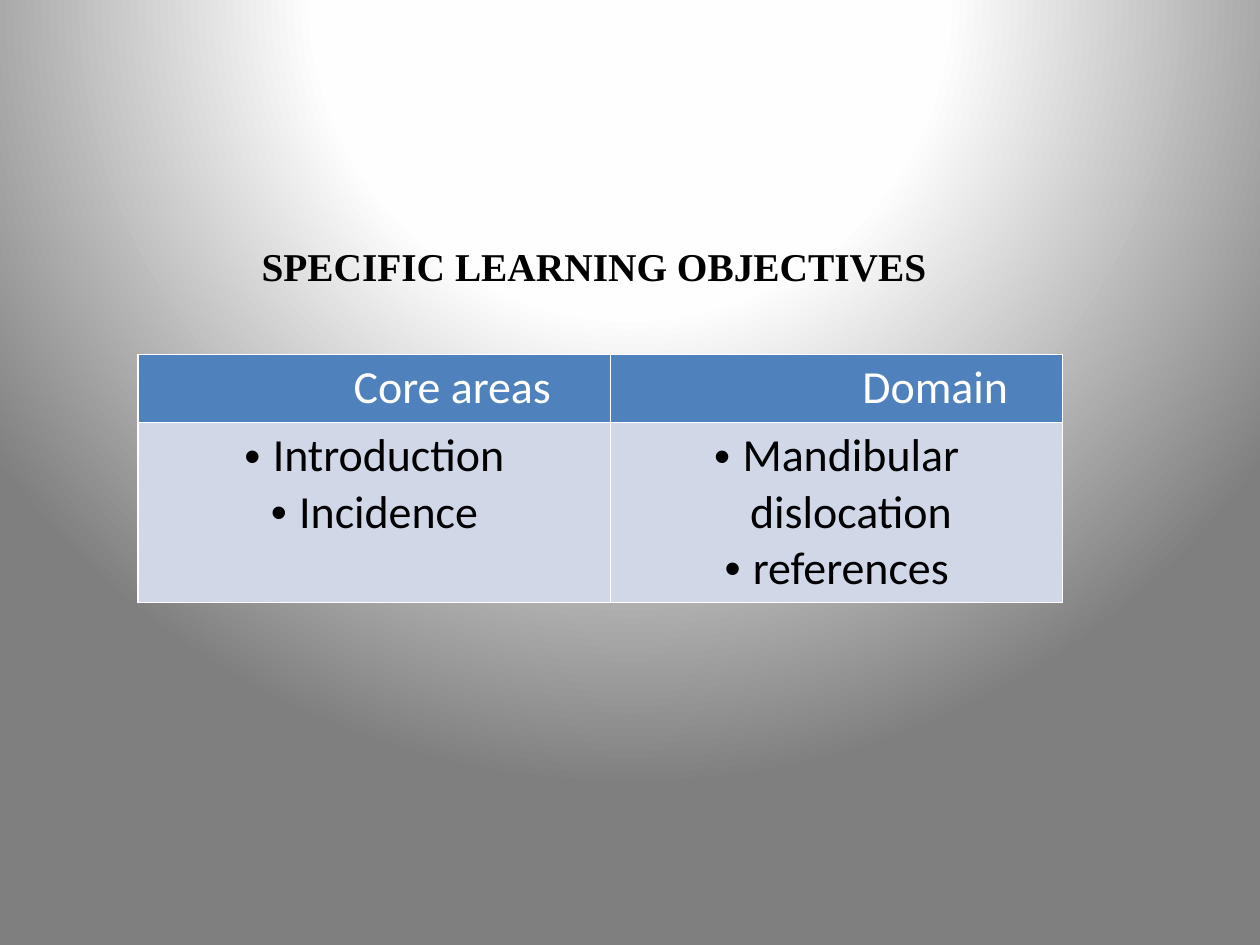
from pptx import Presentation
from pptx.dml.color import RGBColor
from pptx.enum.text import MSO_ANCHOR, PP_ALIGN
from pptx.oxml import parse_xml
from pptx.oxml.ns import nsdecls, qn
from pptx.util import Inches, Pt

COLORS = {
    "white": "FFFFFF",
    "near_white": "FEFEFE",
    "gray": "7F7F7F",
    "header": "4F81BD",
    "body": "D0D8E8",
    "black": "000000",
}
COLUMNS = [
    {"width": 4, "heading": "Core areas", "indent": 1.32,
     "items": ["Introduction", "Incidence"]},
    {"width": 3.83, "heading": "Domain", "indent": 1.67,
     "items": ["Mandibular dislocation", "references"]},
]
ROW_HEIGHTS = [0.57, 1.5]
BULLET_INDENT = 0.24


def add_text(paragraph, text, font_name, size, color, bold=False):
    paragraph.alignment = PP_ALIGN.CENTER
    run = paragraph.add_run()
    run.text = text
    run.font.name = font_name
    run.font.size = Pt(size)
    run.font.bold = bold
    run.font.color.rgb = RGBColor.from_string(COLORS[color])


def style_cell(cell, fill):
    """Give the cell thin white borders and a solid fill."""
    properties = cell._tc.get_or_add_tcPr()
    for side in ("lnL", "lnR", "lnT", "lnB"):
        properties.append(parse_xml(
            f'<a:{side} {nsdecls("a")} w="{Pt(1)}"><a:solidFill>'
            f'<a:srgbClr val="{COLORS["white"]}"/></a:solidFill></a:{side}>'))
    cell.fill.solid()
    cell.fill.fore_color.rgb = RGBColor.from_string(COLORS[fill])


presentation = Presentation()
presentation.slide_width = Inches(10.67)
presentation.slide_height = Inches(8)
slide = presentation.slides.add_slide(presentation.slide_layouts[5])

# Radial background, centred above the slide
slide.background.fill.solid()
background = slide.element.find(".//" + qn("p:bgPr"))
stops = "".join(
    f'<a:gs pos="{position * 1000}"><a:srgbClr val="{COLORS[color]}"/></a:gs>'
    for position, color in [(0, "white"), (40, "near_white"), (100, "gray")])
gradient = parse_xml(
    f'<a:gradFill {nsdecls("a")} rotWithShape="1"><a:gsLst>{stops}</a:gsLst>'
    '<a:path path="circle"><a:fillToRect l="50000" t="-80000" r="50000" b="180000"/>'
    '</a:path></a:gradFill>')
background.replace(background[0], gradient)

# Title
title = slide.shapes.title
title.left, title.top = Inches(2.04), Inches(2)
title.width, title.height = Inches(5.98), Inches(0.5)
title.text_frame.word_wrap = False
title.text_frame.vertical_anchor = MSO_ANCHOR.TOP
add_text(title.text_frame.paragraphs[0], "SPECIFIC LEARNING OBJECTIVES",
         "Times New Roman", 24, "black", bold=True)

# Objectives table
table = slide.shapes.add_table(
    len(ROW_HEIGHTS), len(COLUMNS), Inches(1.17), Inches(3),
    Inches(sum(column["width"] for column in COLUMNS)),
    Inches(sum(ROW_HEIGHTS))).table
for row, height in zip(table.rows, ROW_HEIGHTS):
    row.height = Inches(height)

for index, column in enumerate(COLUMNS):
    table.columns[index].width = Inches(column["width"])

    header = table.cell(0, index)
    style_cell(header, "header")
    paragraph = header.text_frame.paragraphs[0]
    paragraph._p.get_or_add_pPr().set("marL", str(Inches(column["indent"])))
    add_text(paragraph, column["heading"], "Calibri", 28, "white")

    body = table.cell(1, index)
    style_cell(body, "body")
    for number, item in enumerate(column["items"]):
        frame = body.text_frame
        paragraph = frame.add_paragraph() if number else frame.paragraphs[0]
        properties = paragraph._p.get_or_add_pPr()
        properties.set("marL", str(Inches(BULLET_INDENT)))
        properties.set("indent", str(-Inches(BULLET_INDENT)))
        properties.append(parse_xml(f'<a:buFont {nsdecls("a")} typeface="Arial"/>'))
        properties.append(parse_xml(f'<a:buChar {nsdecls("a")} char="•"/>'))
        add_text(paragraph, item, "Calibri", 28, "black")

presentation.save("out.pptx")
